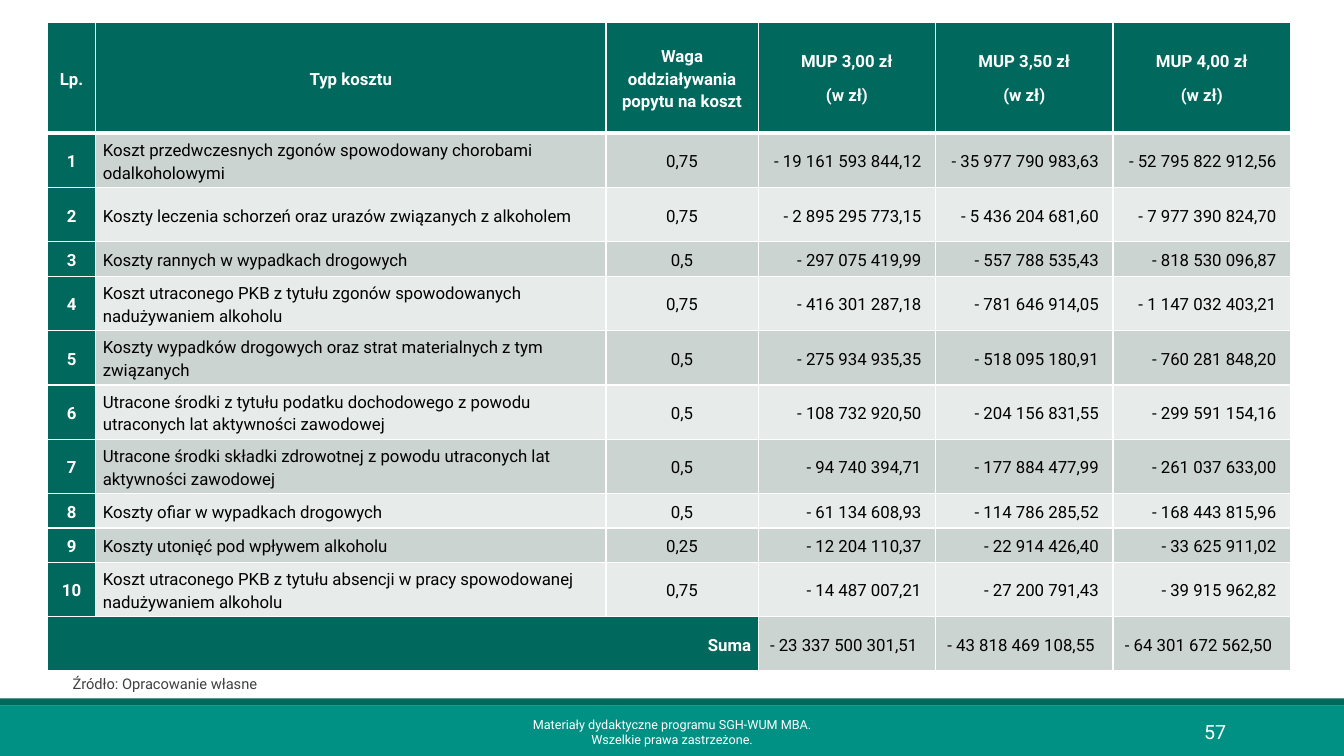
"""Builds the slide with the table of alcohol cost changes by minimum unit price."""
import pptx
import pptx.util
import pptx.dml.color
import pptx.enum.shapes
import pptx.enum.text
import pptx.oxml

Inches = pptx.util.Inches
Pt = pptx.util.Pt
Color = pptx.dml.color.RGBColor
Align = pptx.enum.text.PP_ALIGN
Anchor = pptx.enum.text.MSO_ANCHOR

GREEN = Color(0x00, 0x68, 0x5C)
TEAL = Color(0x00, 0x91, 0x84)
DARK = Color(0xCC, 0xD4, 0xD2)
LIGHT = Color(0xE7, 0xEB, 0xEA)
WHITE = Color(0xFF, 0xFF, 0xFF)
BLACK = Color(0x00, 0x00, 0x00)
GRAY = Color(0x40, 0x40, 0x40)

WIDTHS = [0.48, 5.06, 1.51, 1.76, 1.76, 1.76]
HEIGHTS = [1.1, 0.54, 0.54, 0.34, 0.54, 0.54, 0.54, 0.54, 0.34, 0.34, 0.54, 0.54]
ALIGNS = [Align.CENTER, Align.LEFT, Align.CENTER, Align.RIGHT, Align.RIGHT, Align.RIGHT]
HEADS = ["Lp.", "Typ kosztu", "Waga oddziaływania popytu na koszt",
         "MUP 3,00 zł\n(w zł)", "MUP 3,50 zł\n(w zł)", "MUP 4,00 zł\n(w zł)"]
COSTS = [
    ["Koszt przedwczesnych zgonów spowodowany chorobami odalkoholowymi", "0,75",
     "- 19 161 593 844,12", "- 35 977 790 983,63", "- 52 795 822 912,56"],
    ["Koszty leczenia schorzeń oraz urazów związanych z alkoholem", "0,75",
     "- 2 895 295 773,15", "- 5 436 204 681,60", "- 7 977 390 824,70"],
    ["Koszty rannych w wypadkach drogowych", "0,5",
     "- 297 075 419,99", "- 557 788 535,43", "- 818 530 096,87"],
    ["Koszt utraconego PKB z tytułu zgonów spowodowanych nadużywaniem alkoholu", "0,75",
     "- 416 301 287,18", "- 781 646 914,05", "- 1 147 032 403,21"],
    ["Koszty wypadków drogowych oraz strat materialnych z tym związanych", "0,5",
     "- 275 934 935,35", "- 518 095 180,91", "- 760 281 848,20"],
    ["Utracone środki z tytułu podatku dochodowego z powodu utraconych lat aktywności zawodowej",
     "0,5", "- 108 732 920,50", "- 204 156 831,55", "- 299 591 154,16"],
    ["Utracone środki składki zdrowotnej z powodu utraconych lat aktywności zawodowej", "0,5",
     "- 94 740 394,71", "- 177 884 477,99", "- 261 037 633,00"],
    ["Koszty ofiar w wypadkach drogowych", "0,5",
     "- 61 134 608,93", "- 114 786 285,52", "- 168 443 815,96"],
    ["Koszty utonięć pod wpływem alkoholu", "0,25",
     "- 12 204 110,37", "- 22 914 426,40", "- 33 625 911,02"],
    ["Koszt utraconego PKB z tytułu absencji w pracy spowodowanej nadużywaniem alkoholu", "0,75",
     "- 14 487 007,21", "- 27 200 791,43", "- 39 915 962,82"],
]
SUMS = ["- 23 337 500 301,51 ", "- 43 818 469 108,55 ", "- 64 301 672 562,50 "]


def apply(target, values):
    for name, value in values.items():
        setattr(target, name, value)


def style(frame, size, color, layout, bold=False):
    for para in frame.paragraphs:
        apply(para, layout)
        apply(para.font, {"name": "Roboto", "size": Pt(size), "bold": bold})
        para.font.color.rgb = color


def add_bar(slide, top, height, color):
    bar = slide.shapes.add_shape(pptx.enum.shapes.MSO_SHAPE.RECTANGLE, 0, Inches(top),
                                 Inches(13.33), Inches(height))
    bar.shadow.inherit = False
    bar.fill.solid()
    bar.fill.fore_color.rgb = color
    bar.line.fill.background()


def add_label(slide, box, text, size, color, layout, format):
    label = slide.shapes.add_textbox(*[Inches(side) for side in box])
    frame = label.text_frame
    frame.text = text
    apply(frame, {"word_wrap": True, **format})
    style(frame, size, color, layout)


def set_edge(cell, side, width):
    line = pptx.oxml.parse_xml(
        f'<a:{side} xmlns:a="http://schemas.openxmlformats.org/drawingml/2006/main" '
        f'w="{Pt(width)}"><a:solidFill><a:srgbClr val="{WHITE}"/></a:solidFill></a:{side}>')
    cell._tc.get_or_add_tcPr().append(line)


def fill_cell(cell, text, row, col):
    head = row == 0 or col == 0
    number = row > 0 and col > 2
    align = Align.CENTER if row == 0 else ALIGNS[col]
    if text == "Suma":
        align = Align.RIGHT
    cell.text = text
    apply(cell, {"margin_left": Inches(0.07), "margin_right": Inches(0.14 if number else 0.07),
                 "margin_top": 0, "margin_bottom": 0, "vertical_anchor": Anchor.MIDDLE})
    style(cell.text_frame, 12, WHITE if head else BLACK,
          {"alignment": align, "line_spacing": 1.16, "space_after": Pt(8)}, head)
    edges = {"lnL": 1, "lnR": 1, "lnT": 3 if row == 1 else 1, "lnB": 3 if row == 0 else 1}
    for side, width in edges.items():
        set_edge(cell, side, width)
    cell.fill.solid()
    cell.fill.fore_color.rgb = GREEN if head else DARK if row % 2 else LIGHT


def add_costs(slide):
    rows = [HEADS]
    rows += [[str(place), *cost] for place, cost in enumerate(COSTS, 1)]
    rows.append(["Suma", "", "", *SUMS])
    table = slide.shapes.add_table(len(rows), len(WIDTHS), Inches(0.47), Inches(0.22),
                                   Inches(sum(WIDTHS)), Inches(sum(HEIGHTS))).table
    for column, width in zip(table.columns, WIDTHS):
        column.width = Inches(width)
    for line, height in zip(table.rows, HEIGHTS):
        line.height = Inches(height)
    last = len(rows) - 1
    table.cell(last, 0).merge(table.cell(last, 2))
    for row, texts in enumerate(rows):
        for col, text in enumerate(texts):
            fill_cell(table.cell(row, col), text, row, col)


def main():
    deck = pptx.Presentation()
    apply(deck, {"slide_width": Inches(13.33), "slide_height": Inches(7.5)})
    slide = deck.slides.add_slide(deck.slide_layouts[6])
    add_bar(slide, 7, 0.5, TEAL)
    add_bar(slide, 6.93, 0.07, GREEN)
    middle = {"vertical_anchor": Anchor.MIDDLE}
    add_label(slide, (4.03, 7.06, 5.27, 0.4),
              "Materiały dydaktyczne programu SGH-WUM MBA.\vWszelkie prawa zastrzeżone.",
              9, WHITE, {"alignment": Align.CENTER}, middle)
    add_label(slide, (10.83, 7.06, 1.43, 0.4), "57", 14, WHITE,
              {"alignment": Align.RIGHT}, middle)
    add_costs(slide)
    add_label(slide, (0.72, 6.67, 11.54, 0.4), "Źródło: Opracowanie własne", 10.5, GRAY,
              {"line_spacing": 0.9, "space_after": Pt(2)}, {"margin_left": 0, "margin_right": 0})
    deck.save("out.pptx")


if __name__ == "__main__":
    main()
